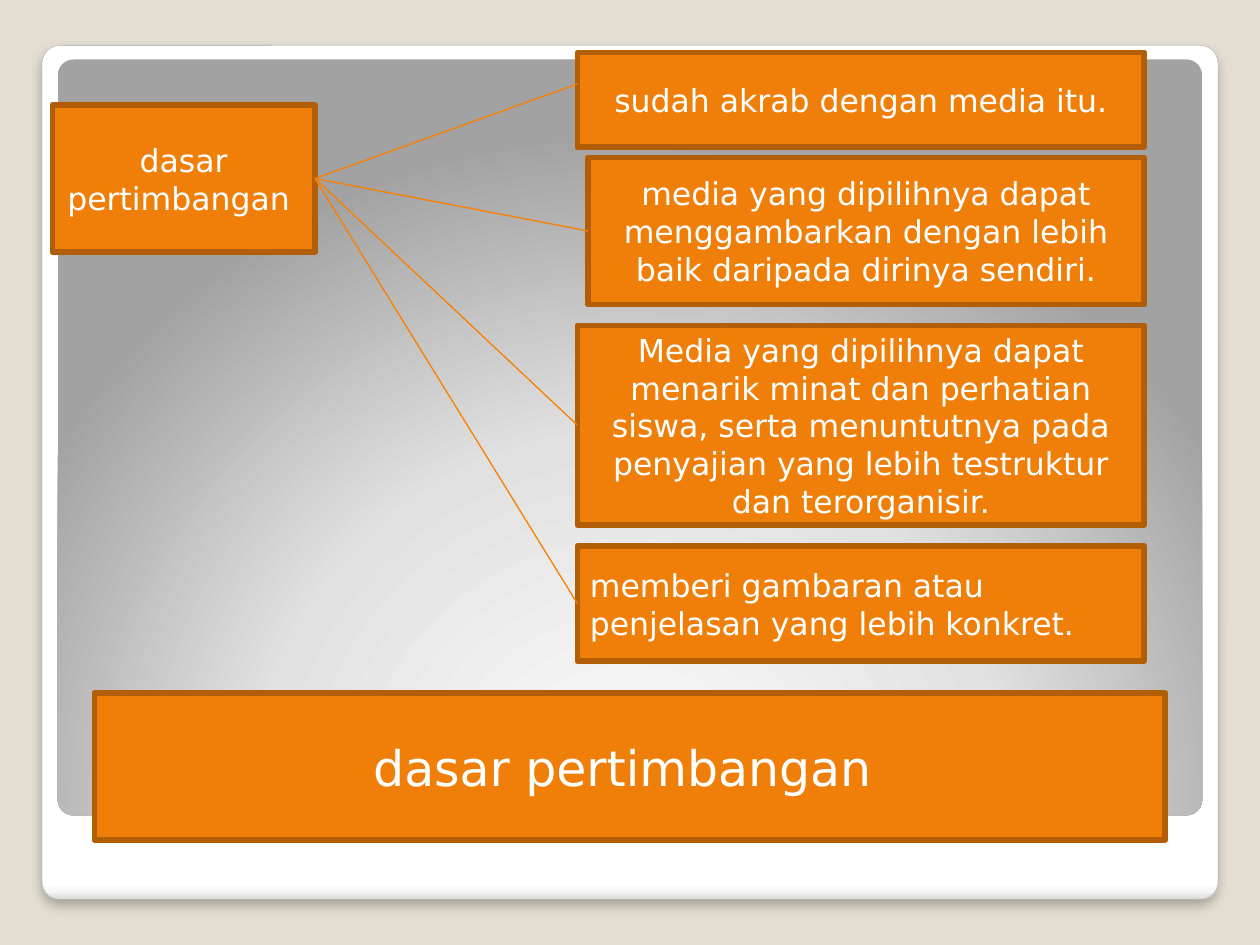
from dataclasses import dataclass

from lxml import etree
from pptx import Presentation
from pptx.dml.color import RGBColor
from pptx.enum.shapes import MSO_CONNECTOR, MSO_SHAPE
from pptx.enum.text import MSO_ANCHOR, PP_ALIGN
from pptx.oxml import parse_xml
from pptx.oxml.ns import qn
from pptx.util import Pt

RECTANGLE = MSO_SHAPE.RECTANGLE
ROUNDED = MSO_SHAPE.ROUNDED_RECTANGLE
STRAIGHT = MSO_CONNECTOR.STRAIGHT
MIDDLE = MSO_ANCHOR.MIDDLE
LEFT, CENTER = PP_ALIGN.LEFT, PP_ALIGN.CENTER
NAMESPACE = 'xmlns:a="http://schemas.openxmlformats.org/drawingml/2006/main"'


@dataclass(frozen=True)
class Theme:
    background: str = "E3DED1"
    frame_line: str = "A4A4A4"
    shadow: str = "000000"
    box: str = "F07F09"
    box_line: str = "B25E07"
    connector: str = "F97F00"
    text: str = "FFFFFF"
    frame_stops: tuple = ((0, "FFFFFF"), (98, "FFFFFF"), (99, "F7F7F7"), (100, "DADADA"))
    panel_stops: tuple = ((0, "FFFFFF"), (55, "E1E1E1"), (100, "A2A2A2"))
    font: str = "DejaVu Sans"
    title_size: float = 28
    body_size: float = 18
    box_line_width: float = 3.35
    connector_width: float = 0.75


THEME = Theme()
TITLE = "dasar pertimbangan "
REASONS = (
    (330, 30, 54, 18, CENTER, "sudah akrab dengan media itu."),
    (336, 90, 84, 42, CENTER,
     "media yang dipilihnya dapat menggambarkan dengan lebih baik daripada dirinya sendiri."),
    (330, 186, 114, 57, CENTER,
     "Media yang dipilihnya dapat menarik minat dan perhatian siswa, serta menuntutnya "
     "pada penyajian yang lebih testruktur dan terorganisir."),
    (330, 312, 66, 33, LEFT, "memberi gambaran atau penjelasan yang lebih konkret."),
)


def color(value):
    return RGBColor.from_string(value)


def write_text(shape, text, size=THEME.body_size, align=CENTER):
    frame = shape.text_frame
    frame.word_wrap = True
    frame.vertical_anchor = MIDDLE
    paragraph = frame.paragraphs[0]
    paragraph.alignment = align
    run = paragraph.add_run()
    run.text = text
    run.font.name = THEME.font
    run.font.size = Pt(size)
    run.font.color.rgb = color(THEME.text)


def add_shape(slide, kind, box):
    shape = slide.shapes.add_shape(kind, *map(Pt, box))
    shape.shadow.inherit = False
    return shape


def add_label(slide, box, text, **text_format):
    shape = add_shape(slide, RECTANGLE, box)
    shape.fill.solid()
    shape.fill.fore_color.rgb = color(THEME.box)
    shape.line.color.rgb = color(THEME.box_line)
    shape.line.width = Pt(THEME.box_line_width)
    write_text(shape, text, **text_format)


def add_gradient_panel(slide, box, stops, direction):
    shape = add_shape(slide, ROUNDED, box)
    shape.adjustments[0] = 0.021
    shape.line.fill.background()
    shape.fill.background()
    stop_list = "".join(
        f'<a:gs pos="{position * 1000}"><a:srgbClr val="{value}"/></a:gs>'
        for position, value in stops
    )
    gradient = parse_xml(
        f"<a:gradFill {NAMESPACE}><a:gsLst>{stop_list}</a:gsLst>{direction}</a:gradFill>"
    )
    properties = shape.element.spPr
    properties.replace(properties.find(qn("a:noFill")), gradient)
    return shape


def add_backdrop(slide, box):
    left, top, width, height = box
    frame = add_gradient_panel(slide, box, THEME.frame_stops, '<a:lin ang="5400000" scaled="0"/>')
    frame.line.color.rgb = color(THEME.frame_line)
    frame.line.width = Pt(0.16)
    effects = frame.element.spPr.find(qn("a:effectLst"))
    effects.append(parse_xml(
        f'<a:outerShdw {NAMESPACE} blurRad="{Pt(6)}" dist="{Pt(4)}" dir="5400000" '
        f'algn="t" rotWithShape="0"><a:srgbClr val="{THEME.shadow}">'
        '<a:alpha val="25000"/></a:srgbClr></a:outerShdw>'
    ))
    add_gradient_panel(
        slide, (left + 9, top + 8, width - 18, 432), THEME.panel_stops,
        '<a:path path="circle"><a:fillToRect l="50000" t="175000" r="50000" b="-75000"/></a:path>',
    )


def add_link(slide, start, end):
    link = slide.shapes.add_connector(STRAIGHT, *map(Pt, start + end))
    link.line.color.rgb = color(THEME.connector)
    link.line.width = Pt(THEME.connector_width)
    etree.SubElement(link.element.spPr, qn("a:effectLst"))


def add_reason_tree(slide, box):
    left, top, width, height = box
    root_width, root_height = 150, 84
    root_top = top + 30
    right = left + width
    add_label(slide, (left, root_top, root_width, root_height), TITLE)
    start = (left + root_width, root_top + root_height / 2)
    for reason_left, reason_top, reason_height, link_offset, align, text in REASONS:
        x, y = left + reason_left - 30, top + reason_top - 30
        add_label(slide, (x, y, right - x, reason_height), text, align=align)
        add_link(slide, start, (x, y + link_offset))


def main():
    presentation = Presentation()
    presentation.slide_width, presentation.slide_height = Pt(720), Pt(540)
    slide = presentation.slides.add_slide(presentation.slide_layouts[6])
    slide.background.fill.solid()
    slide.background.fill.fore_color.rgb = color(THEME.background)
    add_backdrop(slide, (24, 26, 672, 488))
    add_label(slide, (54, 396, 612, 84), TITLE, size=THEME.title_size)
    add_reason_tree(slide, (30, 30, 624, 348))
    presentation.save("out.pptx")


if __name__ == "__main__":
    main()
